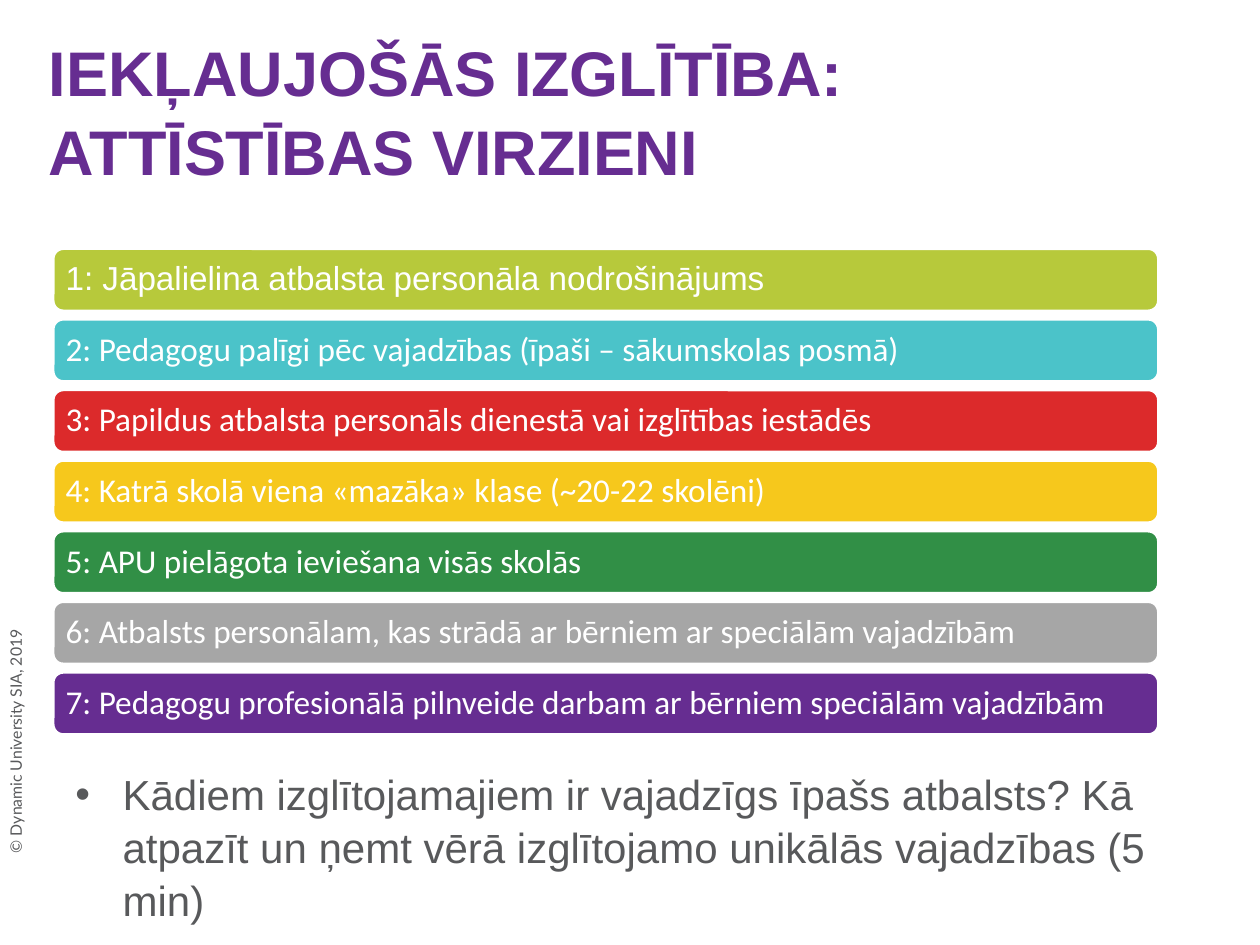
from lxml.etree import SubElement
from pptx import Presentation
from pptx.dml.color import RGBColor
from pptx.enum.shapes import MSO_SHAPE
from pptx.enum.text import MSO_ANCHOR, PP_ALIGN
from pptx.oxml.ns import qn
from pptx.util import Pt

COLORS = {
    "purple": "662D91",
    "lime": "B7C93B",
    "turquoise": "4BC3C9",
    "red": "DC2A2B",
    "yellow": "F6C81C",
    "green": "318F46",
    "grey": "A6A6A6",
    "white": "FFFFFF",
    "text": "58595B",
}
TITLE = {"name": "Arial", "size": Pt(36), "bold": True, "color": "purple"}
QUESTION = {"name": "Arial", "size": Pt(24), "color": "text"}
COPYRIGHT = {"name": "Lato", "size": Pt(9), "color": "text"}
DIRECTION = {"name": "Calibri", "size": Pt(19), "color": "white"}
FIRST_DIRECTION = {**DIRECTION, "name": "Arial"}

DIRECTIONS = [
    ("lime", "Jāpalielina atbalsta personāla nodrošinājums"),
    ("turquoise", "Pedagogu palīgi pēc vajadzības (īpaši – sākumskolas posmā)"),
    ("red", "Papildus atbalsta personāls dienestā vai izglītības iestādēs"),
    ("yellow", "Katrā skolā viena «mazāka» klase (~20-22 skolēni)"),
    ("green", "APU pielāgota ieviešana visās skolās"),
    ("grey", "Atbalsts personālam, kas strādā ar bērniem ar speciālām vajadzībām"),
    ("purple", "Pedagogu profesionālā pilnveide darbam ar bērniem speciālām vajadzībām"),
]
BAR_LEFT, BAR_TOP, BAR_WIDTH, BAR_HEIGHT = 30.2, 141.9, 632, 36
BAR_STEP = 40.35


def rgb(name):
    return RGBColor.from_string(COLORS[name])


def write(para, text, style):
    span = para.add_run()
    span.text = text
    for key, value in style.items():
        if key == "color":
            span.font.color.rgb = rgb(value)
        else:
            setattr(span.font, key, value)


def add_text(page, frame, text, style, anchor=MSO_ANCHOR.TOP, spacing=1.0):
    box = page.shapes.add_textbox(*map(Pt, frame))
    box.text_frame.word_wrap = True
    box.text_frame.vertical_anchor = anchor
    para = box.text_frame.paragraphs[0]
    para.line_spacing = spacing
    write(para, text, style)
    return box


def add_bullet(para, indent):
    props = para._p.get_or_add_pPr()
    props.set("marL", str(Pt(indent)))
    props.set("indent", str(-Pt(indent)))
    SubElement(props, qn("a:buFont"), typeface="Arial")
    SubElement(props, qn("a:buChar"), char="•")


def add_bar(page, top, color, text, style):
    frame = BAR_LEFT, top, BAR_WIDTH, BAR_HEIGHT
    bar = page.shapes.add_shape(MSO_SHAPE.ROUNDED_RECTANGLE, *map(Pt, frame))
    bar.shadow.inherit = False
    bar.fill.solid()
    bar.fill.fore_color.rgb = rgb(color)
    bar.line.color.rgb = rgb("white")
    bar.line.width = Pt(2)
    layout = {
        "word_wrap": True,
        "vertical_anchor": MSO_ANCHOR.MIDDLE,
        "margin_left": Pt(5.6),
        "margin_right": Pt(5.6),
        "margin_top": Pt(5.6),
        "margin_bottom": Pt(5.6),
    }
    for key, value in layout.items():
        setattr(bar.text_frame, key, value)
    para = bar.text_frame.paragraphs[0]
    para.alignment = PP_ALIGN.LEFT
    para.line_spacing = 0.9
    write(para, text, style)


def main():
    deck = Presentation()
    deck.slide_width, deck.slide_height = Pt(720), Pt(540)
    page = deck.slides.add_slide(deck.slide_layouts[6])

    copyright_box = add_text(
        page, (-140.4, 336.2, 298.8, 18), "© Dynamic University SIA, 2019", COPYRIGHT
    )
    copyright_box.rotation = 270
    add_text(
        page, (20.9, 17.3, 600, 90), "IEKĻAUJOŠĀS IZGLĪTĪBA: ATTĪSTĪBAS VIRZIENI",
        TITLE, MSO_ANCHOR.MIDDLE, 1.05,
    )
    for index, (color, text) in enumerate(DIRECTIONS):
        style = DIRECTION if index else FIRST_DIRECTION
        add_bar(page, BAR_TOP + index * BAR_STEP, color, f"{index + 1}: {text}", style)
    question = add_text(
        page, (36, 434.2, 645.8, 61.2),
        "Kādiem izglītojamajiem ir vajadzīgs īpašs atbalsts? "
        "Kā atpazīt un ņemt vērā izglītojamo unikālās vajadzības (5 min)",
        QUESTION, spacing=1.05,
    )
    add_bullet(question.text_frame.paragraphs[0], 27)
    deck.save("out.pptx")


if __name__ == "__main__":
    main()
